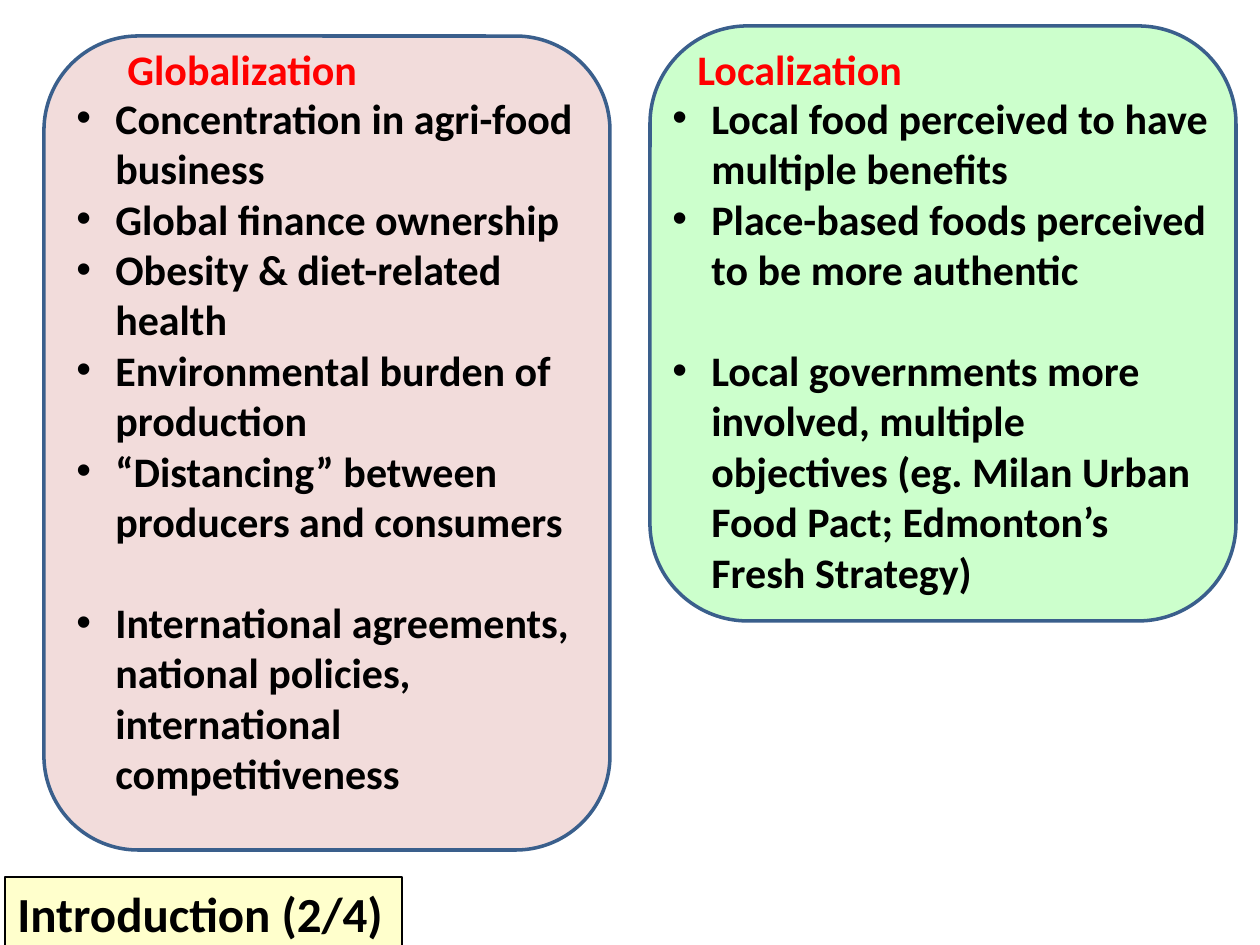
from dataclasses import dataclass

from lxml import etree
from pptx import Presentation
from pptx import util as u
from pptx.dml.color import RGBColor
from pptx.enum import shapes, text
from pptx.oxml.ns import qn

PX = 914400 / 126
INDENT = 39
BLANK_LINE = 29  # points, one line of 24 pt text
COLORS = {
    "pink": "F2DCDB",
    "green": "CCFFCC",
    "yellow": "FFFFCC",
    "border": "3A5F8C",
    "heading": "FF0000",
    "body": "000000",
}


@dataclass(frozen=True)
class Box:
    left: int
    top: int
    width: int
    height: int

    def emu(self) -> list[u.Emu]:
        return [px(n) for n in (self.left, self.top, self.width, self.height)]


@dataclass(frozen=True)
class Panel:
    fill: str
    frame: Box
    heading: str
    heading_box: Box
    points: tuple[str, ...]
    points_box: Box
    gap_before: int  # index of the point set apart from those above it


PANELS = (
    Panel(
        "green", Box(650, 26, 586, 595),
        "Localization", Box(685, 37, 233, 63),
        (
            "Local food perceived to have multiple benefits",
            "Place-based foods perceived to be more authentic",
            "Local governments more involved, multiple objectives "
            "(eg. Milan Urban Food Pact; Edmonton’s Fresh Strategy)",
        ),
        Box(660, 86, 561, 522), 2,
    ),
    Panel(
        "pink", Box(44, 36, 566, 814),
        "Globalization", Box(115, 37, 257, 63),
        (
            "Concentration in agri-food business",
            "Global finance ownership",
            "Obesity & diet-related health",
            "Environmental burden of production",
            "“Distancing” between producers and consumers",
            "International agreements, national policies, "
            "international competitiveness",
        ),
        Box(64, 86, 566, 726), 5,
    ),
)


def px(n: int) -> u.Emu:
    return u.Emu(round(n * PX))


def rgb(name: str) -> RGBColor:
    return RGBColor.from_string(COLORS[name])


def add_block(slide, kind, box: Box, fill: str, line: str, weight: float):
    block = slide.shapes.add_shape(kind, *box.emu())
    block.shadow.inherit = False
    block.fill.solid()
    block.fill.fore_color.rgb = rgb(fill)
    block.line.color.rgb = rgb(line)
    block.line.width = u.Pt(weight)
    return block


def write(paragraph, words: str, *, size: int = 24, color: str = "body",
          bullet: bool = False, before: int = 0) -> None:
    paragraph.alignment = text.PP_ALIGN.LEFT
    paragraph.space_before = u.Pt(before)
    run = paragraph.add_run()
    run.text = words
    run.font.name = "Calibri"
    run.font.size = u.Pt(size)
    run.font.bold = True
    run.font.color.rgb = rgb(color)
    if bullet:
        props = paragraph._p.get_or_add_pPr()
        props.set("marL", str(px(INDENT)))
        props.set("indent", str(-px(INDENT)))
        etree.SubElement(props, qn("a:buFont"), typeface="Arial")
        etree.SubElement(props, qn("a:buChar"), char="•")


def add_panel(slide, panel: Panel) -> None:
    add_block(slide, shapes.MSO_SHAPE.ROUNDED_RECTANGLE, panel.frame,
              panel.fill, "border", 2)

    heading = slide.shapes.add_textbox(*panel.heading_box.emu()).text_frame
    heading.word_wrap = False
    write(heading.paragraphs[0], panel.heading, color="heading")

    body = slide.shapes.add_textbox(*panel.points_box.emu()).text_frame
    body.word_wrap = True
    for i, point in enumerate(panel.points):
        paragraph = body.add_paragraph() if i else body.paragraphs[0]
        write(paragraph, point, bullet=True,
              before=BLANK_LINE if i == panel.gap_before else 0)


def add_section_label(slide) -> None:
    label = add_block(slide, shapes.MSO_SHAPE.RECTANGLE,
                      Box(5, 877, 397, 72), "yellow", "body", 0.75)
    frame = label.text_frame
    frame.word_wrap = True
    frame.vertical_anchor = text.MSO_ANCHOR.TOP
    write(frame.paragraphs[0], "Introduction (2/4)", size=28)


def main() -> None:
    deck = Presentation()
    deck.slide_width, deck.slide_height = px(1260), px(945)
    slide = deck.slides.add_slide(deck.slide_layouts[6])
    for panel in PANELS:
        add_panel(slide, panel)
    add_section_label(slide)
    deck.save("out.pptx")


if __name__ == "__main__":
    main()
